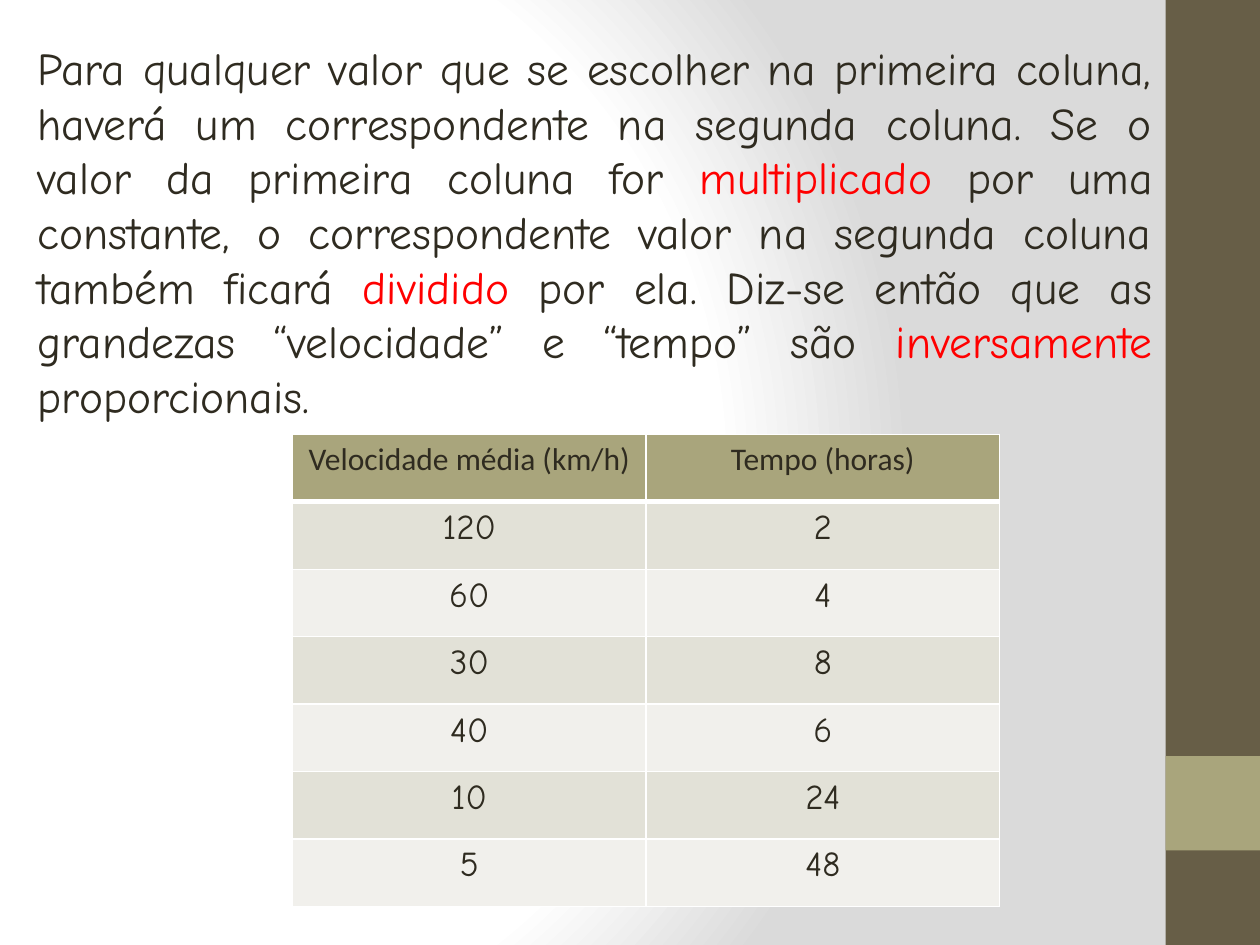
from lxml import etree
from pptx import Presentation
from pptx import util as u
from pptx.dml.color import RGBColor
from pptx.enum import shapes, text
from pptx.oxml import parse_xml
from pptx.oxml.ns import nsdecls, qn

Pt = u.Pt
INK, RED, WHITE = "2F2B20", "FF0000", "FFFFFF"
BROWN, OLIVE = "675E47", "A9A57C"
BANDS = ["E2E1D7", "F1F0EC"]
BODY_FONT, HEAD_FONT = "Comic Neue", "Calibri"

PARAGRAPH = [
    ("Para qualquer valor que se escolher na primeira coluna, haverá um "
     "correspondente na segunda coluna. Se o valor da primeira coluna for ", INK),
    ("multiplicado", RED),
    (" por uma constante, o correspondente valor na segunda coluna "
     "também ficará ", INK),
    ("dividido", RED),
    (" por ela. Diz-se então que as grandezas “velocidade” e “tempo” são ", INK),
    ("inversamente", RED),
    (" proporcionais.", INK),
]
ROWS = [
    ("Velocidade média (km/h)", "Tempo (horas)"),
    ("120", "2"), ("60", "4"), ("30", "8"),
    ("40", "6"), ("10", "24"), ("5", "48"),
]
SIDEBAR = [(0, 540, BROWN), (432, 54, OLIVE)]  # top, height, colour
BACKGROUND = [(0, WHITE), (75, WHITE), (100, "DADADA")]


def rgb(code):
    return RGBColor.from_string(code)


def add_run(p, words, size, font, color):
    r = p.add_run()
    r.text = words
    r.font.size, r.font.name, r.font.bold = Pt(size), font, False
    r.font.color.rgb = rgb(color)


def set_background(s):
    """Circular gradient centred towards the left of the slide."""
    stops = "".join(f'<a:gs pos="{pos * 1000}"><a:srgbClr val="{c}"/></a:gs>'
                    for pos, c in BACKGROUND)
    s.element.cSld.insert(0, parse_xml(
        f'<p:bg {nsdecls("p", "a")}><p:bgPr><a:gradFill rotWithShape="1">'
        f'<a:gsLst>{stops}</a:gsLst><a:path path="circle">'
        '<a:fillToRect l="20000" t="50000" r="100000" b="50000"/></a:path>'
        '</a:gradFill><a:effectLst/></p:bgPr></p:bg>'))


def set_borders(cell, bottom):
    tcPr = cell._tc.get_or_add_tcPr()
    widths = {"lnL": 1, "lnR": 1, "lnT": 1, "lnB": bottom}
    for i, (side, width) in enumerate(widths.items()):
        ln = etree.Element(qn(f"a:{side}"), w=str(Pt(width)))
        fill = etree.SubElement(ln, qn("a:solidFill"))
        etree.SubElement(fill, qn("a:srgbClr"), val=WHITE)
        tcPr.insert(i, ln)


def add_sidebar(s):
    for top, height, color in SIDEBAR:
        sp = s.shapes.add_shape(shapes.MSO_SHAPE.RECTANGLE,
                                Pt(666), Pt(top), Pt(54), Pt(height))
        sp.shadow.inherit = False
        sp.fill.solid()
        sp.fill.fore_color.rgb = rgb(color)
        sp.line.fill.background()


def add_speed_table(s):
    table = s.shapes.add_table(len(ROWS), len(ROWS[0]), Pt(167.2), Pt(248.2),
                               Pt(404), Pt(270)).table
    for i, row in enumerate(ROWS):
        head = i == 0
        for j, words in enumerate(row):
            cell = table.cell(i, j)
            cell.margin_left = cell.margin_right = Pt(5.2)
            cell.margin_top = cell.margin_bottom = Pt(3.6)
            cell.fill.solid()
            cell.fill.fore_color.rgb = rgb(OLIVE if head else BANDS[(i - 1) % 2])
            set_borders(cell, 3 if head else 1)
            p = cell.text_frame.paragraphs[0]
            p.alignment = text.PP_ALIGN.CENTER
            add_run(p, words, 18 if head else 20,
                    HEAD_FONT if head else BODY_FONT, INK)


def add_explanation(s):
    tf = s.shapes.add_textbox(Pt(14.4), Pt(19.5), Pt(651.6), Pt(227.5)).text_frame
    tf.word_wrap = True
    tf.auto_size = text.MSO_AUTO_SIZE.SHAPE_TO_FIT_TEXT
    p = tf.paragraphs[0]
    p.alignment = text.PP_ALIGN.JUSTIFY
    for words, color in PARAGRAPH:
        add_run(p, words, 26, BODY_FONT, color)


def main():
    prs = Presentation()
    prs.slide_width, prs.slide_height = Pt(720), Pt(540)
    s = prs.slides.add_slide(prs.slide_layouts[6])
    set_background(s)
    add_sidebar(s)
    add_speed_table(s)
    add_explanation(s)
    prs.save("out.pptx")


if __name__ == "__main__":
    main()
